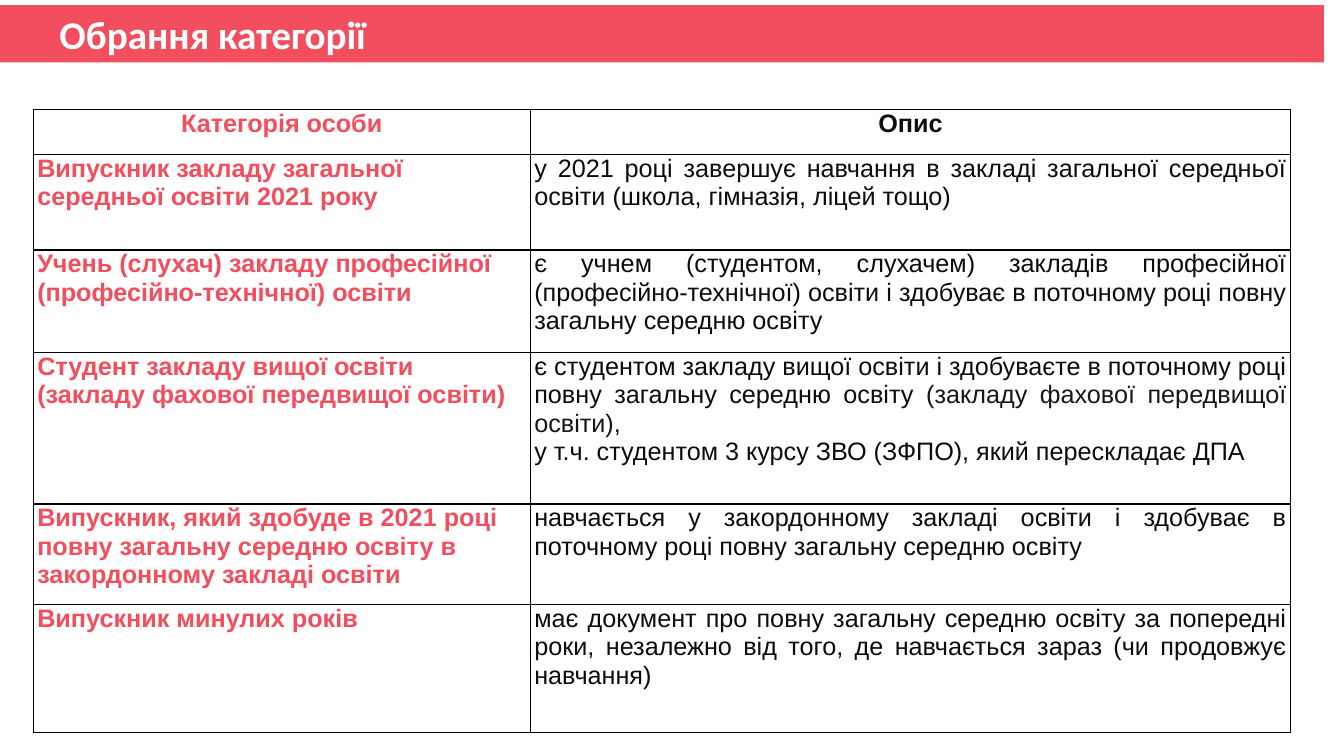
from dataclasses import dataclass

from lxml import etree
from pptx import Presentation
from pptx.dml.color import RGBColor
from pptx.enum.shapes import MSO_SHAPE
from pptx.enum.text import MSO_ANCHOR, PP_ALIGN
from pptx.oxml.ns import qn
from pptx.util import Inches, Pt

RECTANGLE = MSO_SHAPE.RECTANGLE
MIDDLE = MSO_ANCHOR.MIDDLE
LEFT, CENTER, JUSTIFY = PP_ALIGN.LEFT, PP_ALIGN.CENTER, PP_ALIGN.JUSTIFY

CORAL = RGBColor(0xF2, 0x4E, 0x5E)
WHITE = RGBColor(0xFF, 0xFF, 0xFF)
BLACK = RGBColor(0x00, 0x00, 0x00)
INK = RGBColor(0x0D, 0x0D, 0x0D)
SOFT_INK = RGBColor(0x18, 0x17, 0x17)


@dataclass(frozen=True)
class Piece:
    text: str
    color: RGBColor = INK


@dataclass(frozen=True)
class Category:
    height: float
    name: str
    description: list[list[Piece]]


CATEGORIES = [
    Category(0.95, "Випускник закладу загальної середньої освіти 2021 року", [[Piece(
        "у 2021 році завершує навчання в закладі загальної середньої освіти "
        "(школа, гімназія, ліцей тощо)")]]),
    Category(1.02, "Учень (слухач) закладу професійної (професійно-технічної) освіти", [[Piece(
        "є учнем (студентом, слухачем) закладів професійної (професійно-технічної) "
        "освіти і здобуває в поточному році повну загальну середню освіту")]]),
    Category(1.5, "Студент закладу вищої освіти (закладу фахової передвищої освіти)", [
        [Piece("є студентом закладу вищої освіти і здобуваєте в поточному році "
               "повну загальну середню освіту "),
         Piece("(закладу фахової передвищої освіти),", SOFT_INK)],
        [Piece("у т.ч. студентом 3 курсу ЗВО (ЗФПО), який перескладає ДПА")]]),
    Category(1, "Випускник, який здобуде в 2021 році повну загальну середню освіту "
             "в закордонному закладі освіти", [[Piece(
                 "навчається у закордонному закладі освіти і здобуває "
                 "в поточному році повну загальну середню освіту")]]),
    Category(1.27, "Випускник минулих років", [[Piece(
        "має документ про повну загальну середню освіту за попередні роки, "
        "незалежно від того, де навчається зараз (чи продовжує навчання)")]]),
]
HEADER_HEIGHT = 0.44
COLUMN_WIDTHS = [4.93, 7.54]


def style_run(run, font_name: str, size: float, color: RGBColor, bold: bool) -> None:
    run.font.name = font_name
    run.font.size = Pt(size)
    run.font.color.rgb = color
    run.font.bold = bold


def add_borders(cell) -> None:
    properties = cell._tc.get_or_add_tcPr()
    for position, side in enumerate(("lnL", "lnR", "lnT", "lnB")):
        line = etree.Element(qn(f"a:{side}"), w=str(Pt(1)))
        fill = etree.SubElement(line, qn("a:solidFill"))
        etree.SubElement(fill, qn("a:srgbClr"), val=str(BLACK))
        properties.insert(position, line)


def fill_cell(cell, paragraphs: list[list[Piece]], alignment: PP_ALIGN, bold: bool) -> None:
    cell.margin_left = cell.margin_right = Inches(0.04)
    cell.margin_top = cell.margin_bottom = 0
    cell.fill.background()
    add_borders(cell)
    frame = cell.text_frame
    for index, pieces in enumerate(paragraphs):
        paragraph = frame.add_paragraph() if index else frame.paragraphs[0]
        paragraph.alignment = alignment
        for piece in pieces:
            run = paragraph.add_run()
            run.text = piece.text
            style_run(run, "Arial", 18, piece.color, bold)


def add_title(slide) -> None:
    banner = slide.shapes.add_shape(RECTANGLE, 0, Inches(0.05), Inches(13.13), Inches(0.57))
    banner.shadow.inherit = False
    banner.fill.solid()
    banner.fill.fore_color.rgb = CORAL
    banner.line.fill.background()
    frame = banner.text_frame
    frame.margin_left = Inches(0.59)
    frame.vertical_anchor = MIDDLE
    frame.text = "Обрання категорії"
    frame.paragraphs[0].alignment = LEFT
    style_run(frame.paragraphs[0].runs[0], "Calibri", 28, WHITE, True)


def add_categories(slide) -> None:
    heights = [HEADER_HEIGHT] + [category.height for category in CATEGORIES]
    table = slide.shapes.add_table(
        len(heights), len(COLUMN_WIDTHS), Inches(0.33), Inches(1.09),
        Inches(sum(COLUMN_WIDTHS)), Inches(sum(heights))).table
    for column, width in zip(table.columns, COLUMN_WIDTHS):
        column.width = Inches(width)
    for row, height in zip(table.rows, heights):
        row.height = Inches(height)
    fill_cell(table.cell(0, 0), [[Piece("Категорія особи", CORAL)]], CENTER, True)
    fill_cell(table.cell(0, 1), [[Piece("Опис")]], CENTER, True)
    for index, category in enumerate(CATEGORIES, start=1):
        fill_cell(table.cell(index, 0), [[Piece(category.name, CORAL)]], LEFT, True)
        fill_cell(table.cell(index, 1), category.description, JUSTIFY, False)


def main() -> None:
    presentation = Presentation()
    presentation.slide_width = Inches(13.33)
    presentation.slide_height = Inches(7.5)
    slide = presentation.slides.add_slide(presentation.slide_layouts[6])
    add_title(slide)
    add_categories(slide)
    presentation.save("out.pptx")


if __name__ == "__main__":
    main()
